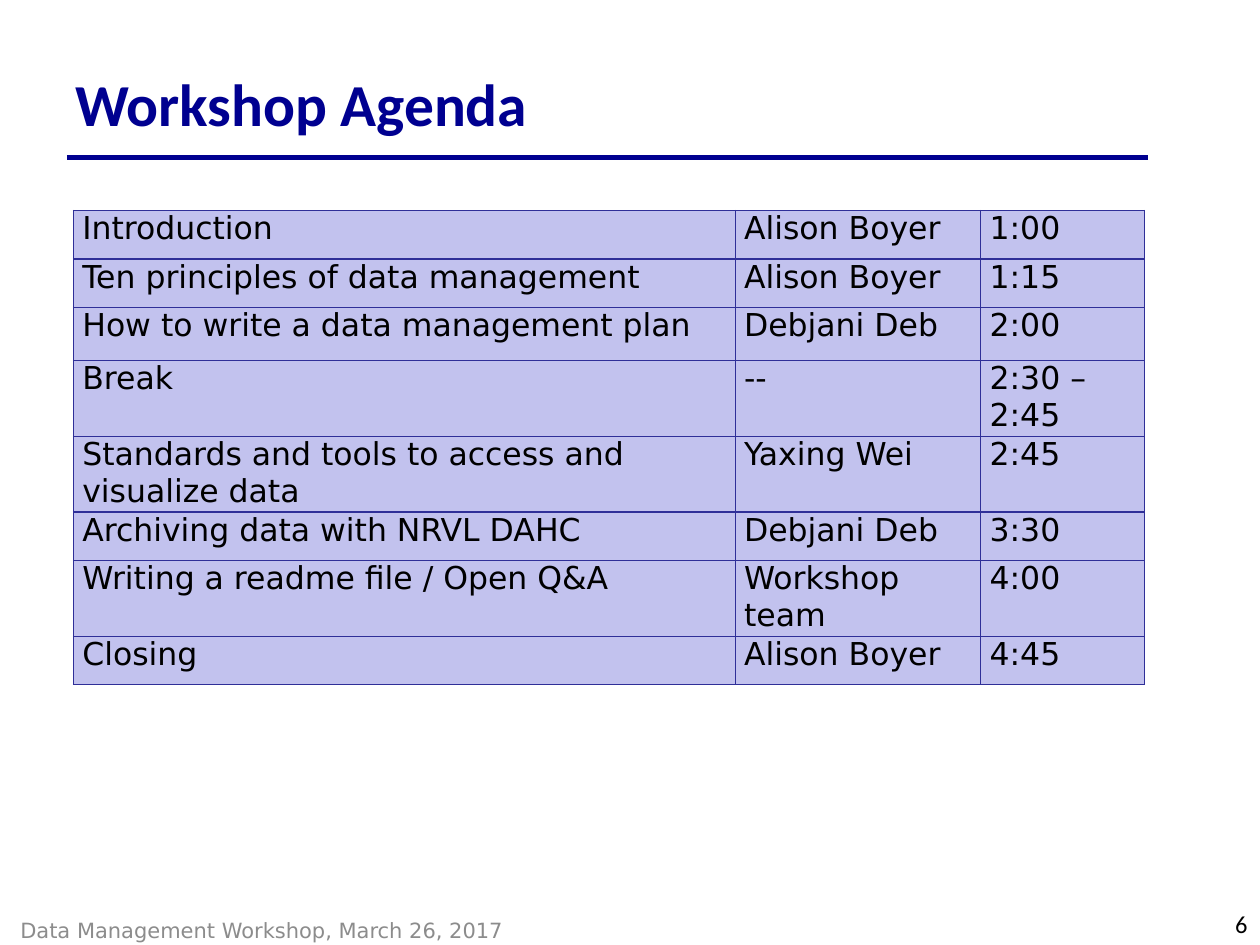
from lxml import etree
from pptx import Presentation
from pptx import util as u
from pptx.dml.color import RGBColor
from pptx.enum import shapes, text
from pptx.oxml import ns

# Content
TITLE = "Workshop Agenda"
FOOTER = "Data Management Workshop, March 26, 2017"
PAGE = "6"
AGENDA = [  # topic, speaker, time, row height in cm
    ("Introduction", "Alison Boyer", "1:00", 0.98),
    ("Ten principles of data management", "Alison Boyer", "1:15", 0.98),
    ("How to write a data management plan", "Debjani Deb", "2:00", 1.07),
    ("Break", "--", "2:30 – 2:45", 1.09),
    ("Standards and tools to access and visualize data", "Yaxing Wei", "2:45", 1.24),
    ("Archiving data with NRVL DAHC", "Debjani Deb", "3:30", 0.98),
    ("Writing a readme file / Open Q&A", "Workshop team", "4:00", 1.09),
    ("Closing", "Alison Boyer", "4:45", 0.98),
]
COLS = (13.34, 4.95, 3.3)

# Styles: font, size, colour, bold
THEME = {
    "title": ("Calibri", 34, "000090", True),
    "foot": ("DejaVu Sans", 12, "8C8C8C", False),
    "page": ("Calibri", 14, "000000", False),
    "cell": ("DejaVu Sans", 18, "000000", False),
    "rule": ("000090", 2.75),
    "grid": ("2F2F98", 0.75),
    "fill": "C2C2EE",
}


def rgb(code):
    return RGBColor.from_string(code)


def write(frame, words, style):
    run = frame.paragraphs[0].add_run()
    run.text = words
    font = run.font
    font.name, size, tint, font.bold = THEME[style]
    font.size = u.Pt(size)
    font.color.rgb = rgb(tint)


def label(slide, box, words, style, inset=0.25, align=text.PP_ALIGN.LEFT,
          anchor=text.MSO_ANCHOR.MIDDLE):
    frame = slide.shapes.add_textbox(*map(u.Cm, box)).text_frame
    frame.word_wrap = True
    frame.margin_left = u.Cm(inset)
    frame.vertical_anchor = anchor
    frame.paragraphs[0].alignment = align
    write(frame, words, style)


def border(cell):
    tint, width = THEME["grid"]
    props = cell._tc.get_or_add_tcPr()
    for side in "LRTB":
        line = etree.SubElement(props, ns.qn(f"a:ln{side}"), w=str(u.Pt(width)))
        fill = etree.SubElement(line, ns.qn("a:solidFill"))
        etree.SubElement(fill, ns.qn("a:srgbClr"), val=tint)


def agenda(slide, left, top):
    high = sum(row[-1] for row in AGENDA)
    size = map(u.Cm, (left, top, sum(COLS), high))
    table = slide.shapes.add_table(len(AGENDA), len(COLS), *size).table
    table.first_row = table.horz_banding = False
    for col, width in zip(table.columns, COLS):
        col.width = u.Cm(width)
    for row, (*words, height) in zip(table.rows, AGENDA):
        row.height = u.Cm(height)
        for cell, word in zip(row.cells, words):
            cell.margin_left = cell.margin_right = u.Cm(0.18)
            cell.margin_top = cell.margin_bottom = 0
            border(cell)
            cell.fill.solid()
            cell.fill.fore_color.rgb = rgb(THEME["fill"])
            write(cell.text_frame, word, "cell")


def rule(slide, left, right, y):
    ends = map(u.Cm, (left, y, right, y))
    line = slide.shapes.add_connector(shapes.MSO_CONNECTOR.STRAIGHT, *ends)
    tint, width = THEME["rule"]
    line.line.color.rgb = rgb(tint)
    line.line.width = u.Pt(width)
    etree.SubElement(line._element.spPr, ns.qn("a:effectLst"))


def main():
    deck = Presentation()
    deck.slide_width, deck.slide_height = u.Cm(25.4), u.Cm(19.05)
    slide = deck.slides.add_slide(deck.slide_layouts[6])

    # Header rule, footer, title and page number
    rule(slide, 1.35, 23.14, 3.18)
    label(slide, (-0.2, 18.24, 14.81, 1.02), FOOTER, "foot", inset=0.61)
    label(slide, (1.27, 0.76, 21.59, 2.62), TITLE, "title")
    label(slide, (19.48, 18.21, 5.92, 0.84), PAGE, "page",
          align=text.PP_ALIGN.RIGHT, anchor=text.MSO_ANCHOR.TOP)

    # Schedule
    agenda(slide, 1.48, 4.24)
    deck.save("out.pptx")


if __name__ == "__main__":
    main()
